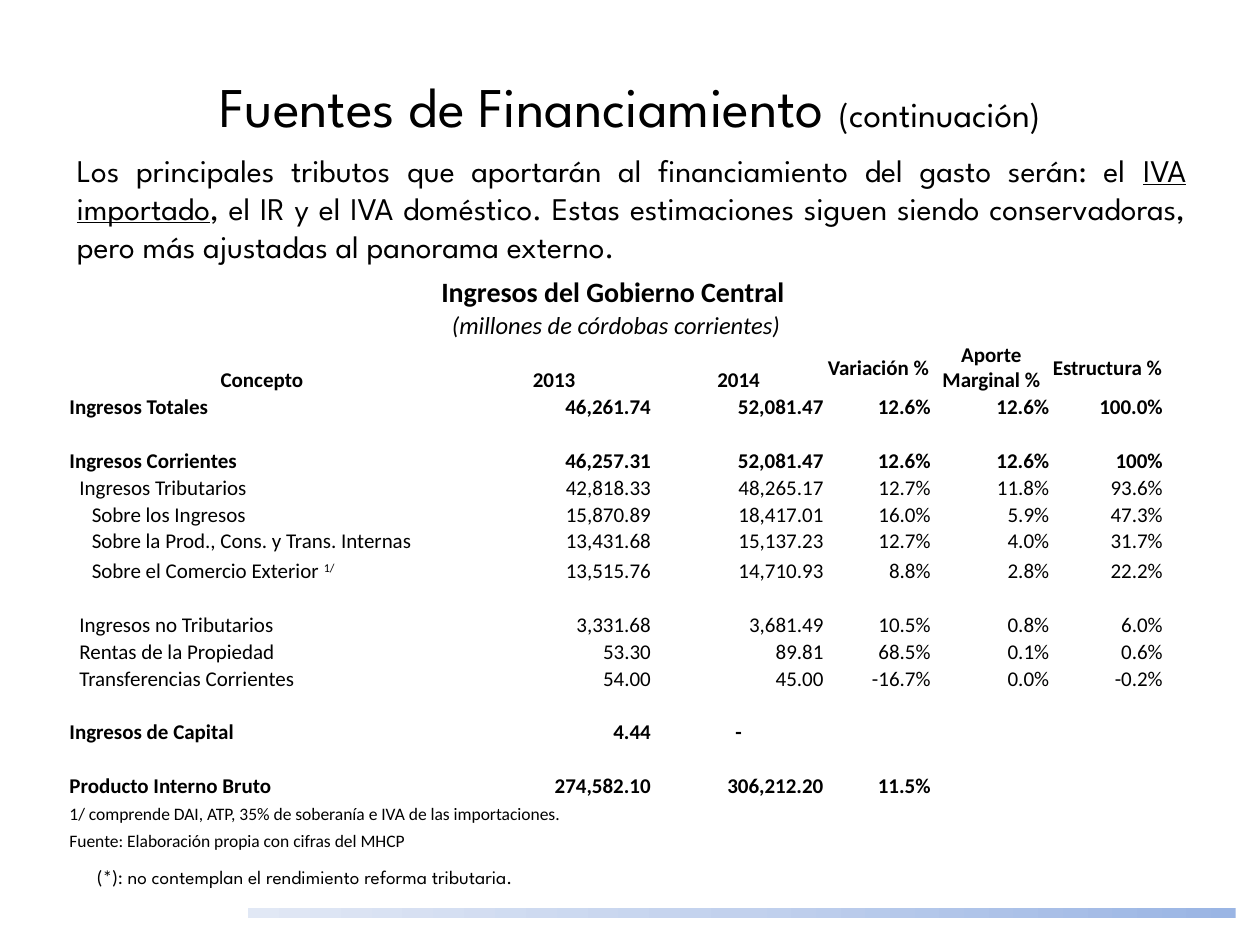
from copy import deepcopy

from lxml import etree
from pptx import Presentation
from pptx.dml.color import RGBColor
from pptx.enum.shapes import MSO_SHAPE
from pptx.enum.text import MSO_ANCHOR, MSO_AUTO_SIZE, PP_ALIGN
from pptx.oxml.ns import qn
from pptx.util import Cm, Pt

LEFT, CENTER, RIGHT, JUSTIFY = PP_ALIGN.LEFT, PP_ALIGN.CENTER, PP_ALIGN.RIGHT, PP_ALIGN.JUSTIFY
TOP, MIDDLE, BOTTOM = MSO_ANCHOR.TOP, MSO_ANCHOR.MIDDLE, MSO_ANCHOR.BOTTOM
GROW = MSO_AUTO_SIZE.SHAPE_TO_FIT_TEXT
RECTANGLE = MSO_SHAPE.RECTANGLE

COLORS = {"text": "000000", "border": "FFFFFF", "dark": "9AB5E4", "mid": "C2D1ED", "light": "E1E8F5"}
DISPLAY, BODY = "League Spartan", "Calibri"

COLUMN_WIDTHS = [7.82, 3.96, 3.48, 2.16, 2.39, 2.29]
ROW_HEIGHT = 0.54
SPECIAL_HEIGHTS = {0: 0.7, 1: 0.62, 2: 1.06, 9: 0.61}
INDENTS = [0.03, 0.23, 0.48]
HEADINGS = ["Concepto", "2013", "2014", "Variación %", "Aporte Marginal %", "Estructura %"]
INCOME_ROWS = [
    (0, "Ingresos Totales", "46,261.74", "52,081.47", "12.6%", "12.6%", "100.0%"),
    None,
    (0, "Ingresos Corrientes", "46,257.31", "52,081.47", "12.6%", "12.6%", "100%"),
    (1, "Ingresos Tributarios", "42,818.33", "48,265.17", "12.7%", "11.8%", "93.6%"),
    (2, "Sobre los Ingresos", "15,870.89", "18,417.01", "16.0%", "5.9%", "47.3%"),
    (2, "Sobre la Prod., Cons. y Trans. Internas", "13,431.68", "15,137.23", "12.7%", "4.0%", "31.7%"),
    (2, "Sobre el Comercio Exterior ", "13,515.76", "14,710.93", "8.8%", "2.8%", "22.2%"),
    None,
    (1, "Ingresos no Tributarios", "3,331.68", "3,681.49", "10.5%", "0.8%", "6.0%"),
    (1, "Rentas de la Propiedad", "53.30", "89.81", "68.5%", "0.1%", "0.6%"),
    (1, "Transferencias Corrientes", "54.00", "45.00", "-16.7%", "0.0%", "-0.2%"),
    None,
    (0, "Ingresos de Capital", "4.44", "-"),
    None,
    (0, "Producto Interno Bruto", "274,582.10", "306,212.20", "11.5%"),
]
FOOTNOTES = [
    "1/ comprende DAI, ATP, 35% de soberanía e IVA de las importaciones.",
    "Fuente: Elaboración propia con cifras del MHCP",
]


class SlideBuilder:
    def __init__(self, slide):
        self.slide = slide

    def add_span(self, para, text, size, font=BODY, bold=False, italic=False, underline=False, raised=False):
        span = para.add_run()
        span.text = text
        span.font.name = font
        span.font.size = Pt(size)
        span.font.bold = bold
        span.font.italic = italic
        span.font.underline = underline
        span.font.color.rgb = RGBColor.from_string(COLORS["text"])
        if raised:
            span.font._element.set("baseline", "30000")

    def add_text(self, left, top, width, height, spans, align=LEFT, anchor=TOP, before=0, grow=False):
        box = self.slide.shapes.add_textbox(Cm(left), Cm(top), Cm(width), Cm(height))
        frame = box.text_frame
        frame.word_wrap = True
        frame.vertical_anchor = anchor
        if grow:
            frame.auto_size = GROW
        para = frame.paragraphs[0]
        para.alignment = align
        para.space_before = Pt(before)
        for text, style in spans:
            self.add_span(para, text, **style)

    def add_gradient_bar(self, left, top, width, height, colors):
        bar = self.slide.shapes.add_shape(RECTANGLE, Cm(left), Cm(top), Cm(width), Cm(height))
        bar.shadow.inherit = False
        bar.rotation = 180
        bar.line.fill.background()
        bar.fill.gradient()
        bar.fill.gradient_angle = 0
        stop_list = bar._element.spPr.find(".//" + qn("a:gsLst"))
        stop_list.append(deepcopy(stop_list[0]))
        for index, (stop, color) in enumerate(zip(bar.fill.gradient_stops, colors)):
            stop.position = index / (len(colors) - 1)
            stop.color.rgb = RGBColor.from_string(color)

    def add_table(self, left, top, widths, heights):
        frame = self.slide.shapes.add_table(
            len(heights), len(widths), Cm(left), Cm(top), Cm(sum(widths)), Cm(sum(heights))
        )
        table = frame.table
        table.first_row = table.horz_banding = False
        for column, width in zip(table.columns, widths):
            column.width = Cm(width)
        for row, height in zip(table.rows, heights):
            row.height = Cm(height)
        for cell in table.iter_cells():
            self.format_cell(cell)
        return table

    def format_cell(self, cell):
        cell.margin_left = cell.margin_right = cell.margin_top = Cm(0.03)
        cell.margin_bottom = Cm(0)
        properties = cell._tc.get_or_add_tcPr()
        for side in ("a:lnL", "a:lnR", "a:lnT", "a:lnB"):
            line = etree.SubElement(properties, qn(side), w=str(Pt(1)))
            fill = etree.SubElement(line, qn("a:solidFill"))
            etree.SubElement(fill, qn("a:srgbClr"), val=COLORS["border"])
        cell.fill.background()
        para = cell.text_frame.paragraphs[0]
        etree.SubElement(para._p, qn("a:endParaRPr"), sz="1000")

    def fill_cell(self, cell, text, align=LEFT, anchor=BOTTOM, indent=INDENTS[0], size=12, **style):
        cell.vertical_anchor = anchor
        cell.margin_left = Cm(indent)
        para = cell.text_frame.paragraphs[0]
        para.alignment = align
        self.add_span(para, text, size, **style)
        return para


def fill_income_table(builder, table):
    last_column = len(COLUMN_WIDTHS) - 1
    captions = [
        ("Ingresos del Gobierno Central ", {"size": 16, "bold": True}),
        ("(millones de córdobas corrientes)", {"size": 14, "italic": True}),
    ]
    for row, (caption, style) in enumerate(captions):
        table.cell(row, 0).merge(table.cell(row, last_column))
        builder.fill_cell(table.cell(row, 0), caption, CENTER, **style)

    for column, heading in enumerate(HEADINGS):
        anchor = BOTTOM if column < 3 else MIDDLE
        builder.fill_cell(table.cell(2, column), heading, CENTER, anchor, bold=True)

    for row, entry in enumerate(INCOME_ROWS, start=3):
        if entry is None:
            continue
        level, label, *values = entry
        bold = level == 0
        para = builder.fill_cell(table.cell(row, 0), label, indent=INDENTS[level], bold=bold)
        if label.startswith("Sobre el Comercio"):
            builder.add_span(para, "1/", 12, raised=True)
        for column, value in enumerate(values, start=1):
            align = CENTER if value == "-" else RIGHT
            builder.fill_cell(table.cell(row, column), value, align, bold=bold)

    for row, note in enumerate(FOOTNOTES, start=3 + len(INCOME_ROWS)):
        table.cell(row, 0).merge(table.cell(row, 1))
        builder.fill_cell(table.cell(row, 0), note, size=10)


def main():
    deck = Presentation()
    deck.slide_width, deck.slide_height = Cm(25.4), Cm(19.05)
    builder = SlideBuilder(deck.slides.add_slide(deck.slide_layouts[6]))

    builder.add_text(1.27, 0.53, 22.86, 3.18, [
        ("Fuentes de Financiamiento ", {"size": 32, "font": DISPLAY}),
        ("(continuación)", {"size": 20, "font": DISPLAY}),
    ], CENTER, MIDDLE)

    body = {"size": 18, "font": DISPLAY}
    builder.add_text(1.3, 2.92, 22.86, 12.57, [
        ("Los principales tributos que aportarán al financiamiento del gasto serán: el ", body),
        ("IVA importado", {**body, "underline": True}),
        (", el IR y el IVA doméstico. Estas estimaciones siguen siendo conservadoras, "
         "pero más ajustadas al panorama externo.", body),
    ], JUSTIFY, before=3.6)

    builder.add_gradient_bar(5, 18.31, 19.91, 0.2, [COLORS[name] for name in ("dark", "mid", "light")])
    builder.add_text(1.7, 17.32, 15.6, 1.19, [
        ("(*): ", {"size": 11}),
        ("no contemplan el rendimiento reforma tributaria.", {"size": 11, "font": DISPLAY}),
    ], grow=True)

    row_count = 3 + len(INCOME_ROWS) + len(FOOTNOTES)
    heights = [SPECIAL_HEIGHTS.get(row, ROW_HEIGHT) for row in range(row_count)]
    table = builder.add_table(1.37, 5.54, COLUMN_WIDTHS, heights)
    fill_income_table(builder, table)

    deck.save("out.pptx")


if __name__ == "__main__":
    main()
